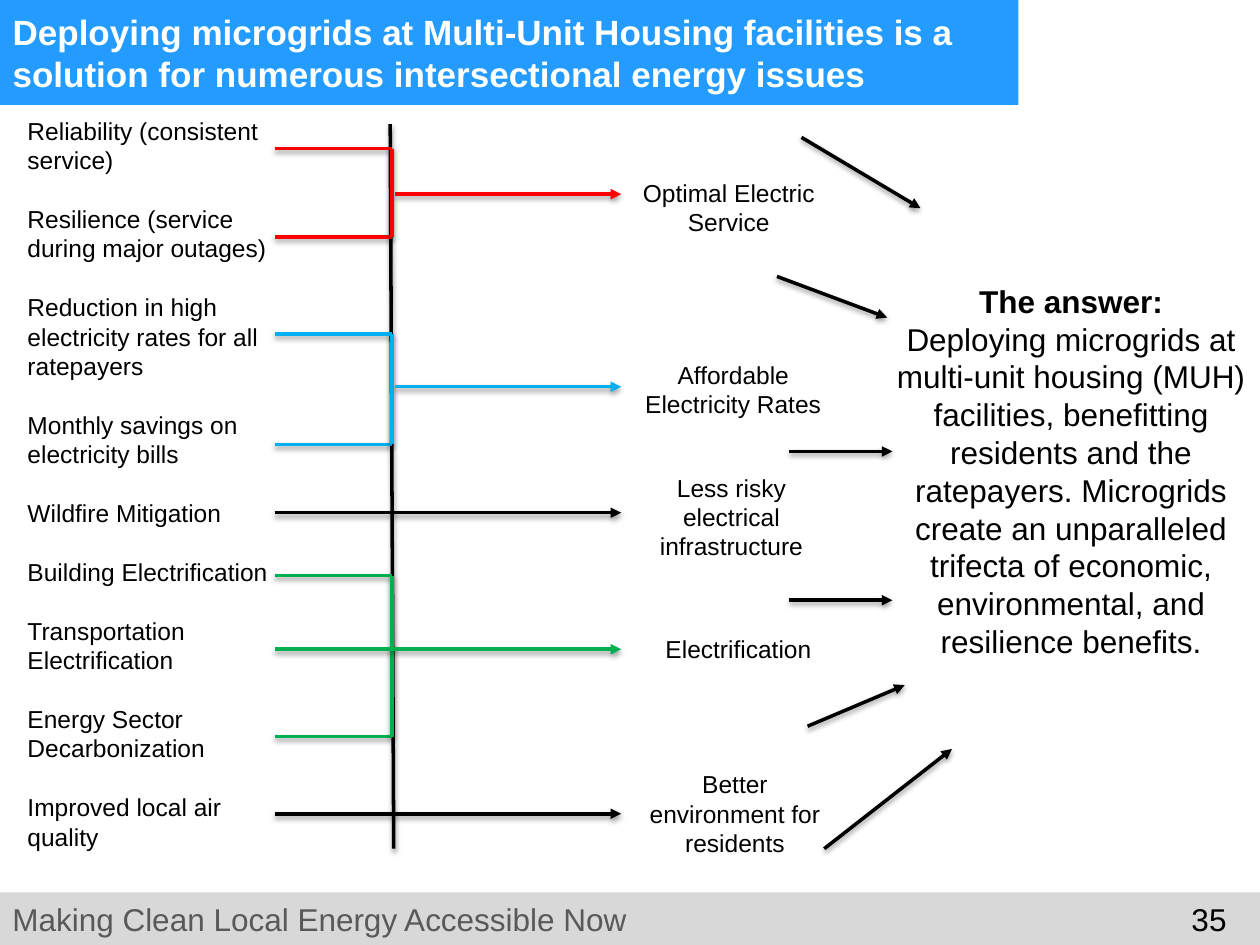
from lxml.etree import SubElement
from pptx import Presentation
from pptx.dml.color import RGBColor
from pptx.enum.shapes import MSO_CONNECTOR, MSO_SHAPE
from pptx.enum.text import MSO_ANCHOR, MSO_AUTO_SIZE, PP_ALIGN
from pptx.oxml.ns import qn
from pptx.util import Pt

COLORS = {
    "black": "000000", "white": "FFFFFF", "blue": "249CFF", "band": "D8D8D8",
    "footer": "595959", "red": "FF0000", "cyan": "00B0F0", "green": "00B050",
}


class Deck:
    font = "Arial"
    line_width = 2

    def __init__(self, width, height):
        self.prs = Presentation()
        self.prs.slide_width, self.prs.slide_height = Pt(width), Pt(height)
        self.s = self.prs.slides.add_slide(self.prs.slide_layouts[1])

    def color(self, name):
        return RGBColor.from_string(COLORS[name])

    def place(self, sp, box):
        sp.left, sp.top, sp.width, sp.height = (Pt(v) for v in box)

    def fill_text(self, sp, text, size, color="black", bold=False,
                  align=PP_ALIGN.LEFT, anchor=MSO_ANCHOR.TOP):
        tf = sp.text_frame
        tf.word_wrap = True
        tf.auto_size = MSO_AUTO_SIZE.NONE
        tf.vertical_anchor = anchor
        tf.text = text
        for p in tf.paragraphs:
            p.alignment = align
            p.space_before = Pt(0)
            for r in p.runs:
                r.font.name, r.font.size, r.font.bold = self.font, Pt(size), bold
                r.font.color.rgb = self.color(color)
        return tf

    def band(self, box, color):
        sp = self.s.shapes.add_shape(MSO_SHAPE.RECTANGLE, *(Pt(v) for v in box))
        sp.shadow.inherit = False
        sp.fill.solid()
        sp.fill.fore_color.rgb = self.color(color)
        sp.line.fill.background()
        # Bands lie behind the placeholders
        sp.element.getparent().insert(2, sp.element)

    def title(self, text, box):
        sp = self.s.shapes.title
        self.place(sp, box)
        self.fill_text(sp, text, 20, "white", True, anchor=MSO_ANCHOR.MIDDLE)

    def body(self, items, box, gap):
        sp = self.s.placeholders[1]
        self.place(sp, box)
        tf = self.fill_text(sp, "\n".join(items), 14)
        for i, p in enumerate(tf.paragraphs):
            pPr = p._p.get_or_add_pPr()
            pPr.set("marL", "0")
            pPr.set("indent", "0")
            SubElement(pPr, qn("a:buNone"))
            # The last item continues the one above it
            if 0 < i < len(items) - 1:
                p.space_before = Pt(gap)

    def text(self, text, box, size=14, **style):
        sp = self.s.shapes.add_textbox(*(Pt(v) for v in box))
        return self.fill_text(sp, text, size, **style)

    def line(self, x1, y1, x2, y2, color="black", arrow=False):
        c = self.s.shapes.add_connector(
            MSO_CONNECTOR.STRAIGHT, Pt(x1), Pt(y1), Pt(x2), Pt(y2))
        c.line.width = Pt(self.line_width)
        c.line.color.rgb = self.color(color)
        if arrow:
            SubElement(c.line._get_or_add_ln(), qn("a:tailEnd"), type="triangle")
        # Soft shadow straight below the line
        effects = SubElement(c.element.spPr, qn("a:effectLst"))
        shadow = SubElement(effects, qn("a:outerShdw"), blurRad=str(Pt(3.1)),
                            dist=str(Pt(1.6)), dir="5400000", rotWithShape="0")
        tone = SubElement(shadow, qn("a:srgbClr"), val=COLORS["black"])
        SubElement(tone, qn("a:alpha"), val="38000")


def main():
    d = Deck(720, 540)

    # Title and footer
    d.band((0, 0, 582, 60), "blue")
    d.band((0, 510, 720, 30), "band")
    d.title("Deploying microgrids at Multi-Unit Housing facilities is a solution "
            "for numerous intersectional energy issues", (0, 0, 576, 60))
    d.text("Making Clean Local Energy Accessible Now", (0, 511, 656, 29), 18,
           color="footer")
    d.text("35", (656, 511, 52, 29), 18, align=PP_ALIGN.RIGHT)

    # Energy issues
    d.body([
        "Reliability (consistent service)",
        "Resilience (service during major outages)",
        "Reduction in high electricity rates for all ratepayers",
        "Monthly savings on electricity bills",
        "Wildfire Mitigation",
        "Building Electrification",
        "Transportation Electrification",
        "Energy Sector Decarbonization",
        "Improved local air",
        "quality",
    ], (8.5, 62.5, 171.5, 465), gap=16.8)

    # Dividing line, and brackets that join issues to an outcome
    left, spine, right = 157, 224, 355
    d.line(223, 71, 225, 485)
    brackets = [
        ("red", (85, 135.5), 226, 111),
        ("cyan", (191, 254), 226, 221),
        ("green", (329, 421), left, 371),
    ]
    for color, (top, bottom), start, y in brackets:
        for branch in (top, bottom):
            d.line(left, branch, spine, branch, color)
        d.line(spine, top, spine, bottom, color)
        d.line(start, y, right, y, color, arrow=True)
    for y in (293, 465):
        d.line(left, y, right, y, arrow=True)

    # Outcomes
    outcomes = [
        ("Optimal Electric Service", (339, 98, 155, 41)),
        ("Affordable Electricity Rates", (359, 202, 120, 41)),
        ("Less risky electrical infrastructure", (365, 266.5, 106, 58)),
        ("Electrification", (355, 359, 134, 24)),
        ("Better environment for residents", (360, 436, 120, 58)),
    ]
    for label, box in outcomes:
        d.text(label, box, align=PP_ALIGN.CENTER)

    # Arrows to the answer
    for ends in [
        (458, 78.5, 526, 119), (444, 158, 507, 181.5), (451, 258, 510, 258),
        (451, 343, 510, 343), (461.5, 415, 517, 391.5), (471, 485, 544, 428),
    ]:
        d.line(*ends, arrow=True)

    # Answer
    tf = d.text("The answer:\nDeploying microgrids at multi-unit housing (MUH) "
                "facilities, benefitting residents and the ratepayers. Microgrids "
                "create an unparalleled trifecta of economic, environmental, and "
                "resilience benefits.", (503, 157.5, 218, 225), 18,
                align=PP_ALIGN.CENTER)
    tf.paragraphs[0].runs[0].font.bold = True

    d.prs.save("out.pptx")


if __name__ == "__main__":
    main()
